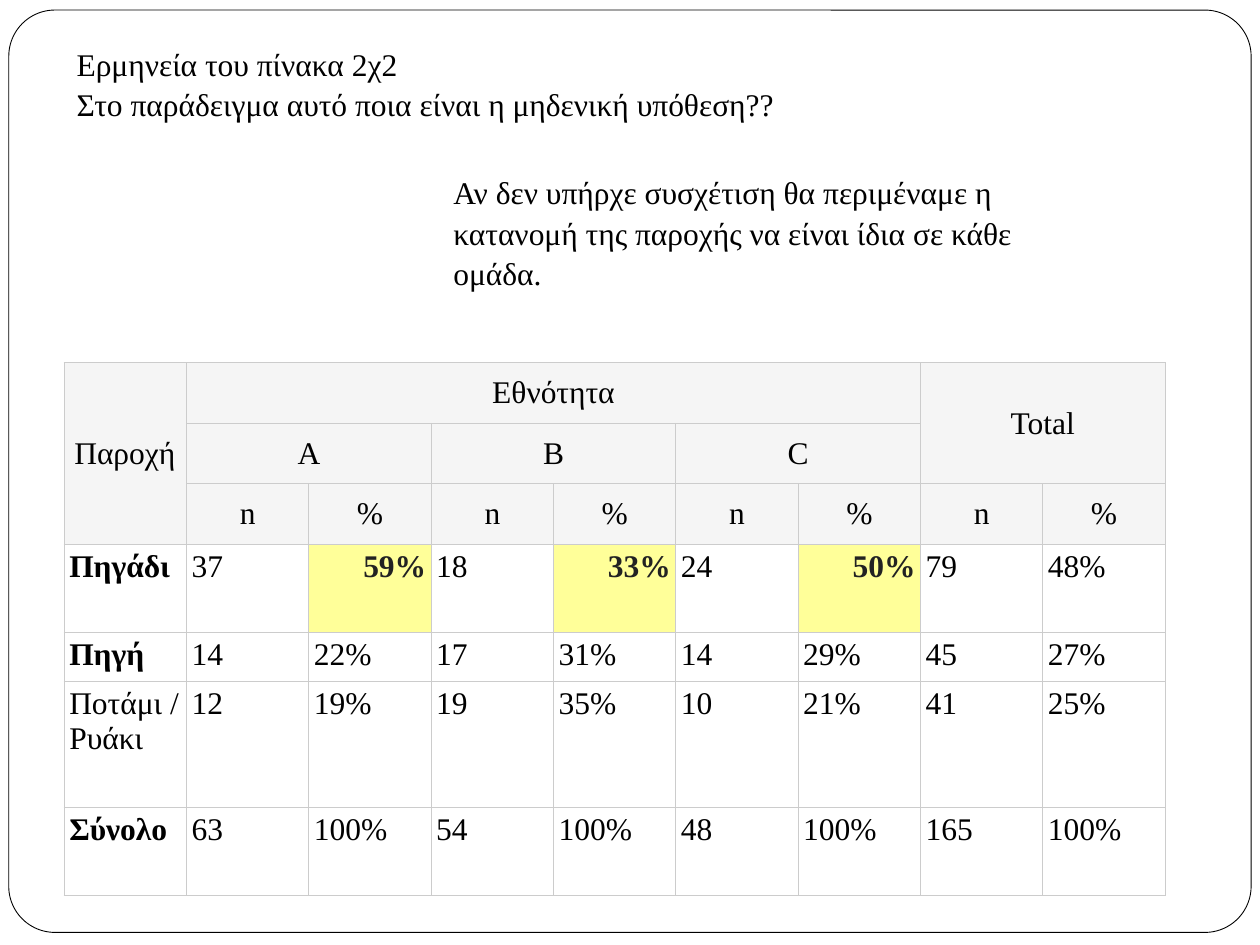
"""Build a slide with a water supply by ethnicity table and its null hypothesis."""
from lxml import etree
from pptx import Presentation
from pptx.dml.color import RGBColor
from pptx.enum.shapes import MSO_SHAPE
from pptx.enum.text import MSO_ANCHOR, PP_ALIGN
from pptx.oxml.ns import qn
from pptx.util import Inches, Pt

ROUNDED = MSO_SHAPE.ROUNDED_RECTANGLE
MIDDLE, TOP = MSO_ANCHOR.MIDDLE, MSO_ANCHOR.TOP
LEFT, CENTER, RIGHT = PP_ALIGN.LEFT, PP_ALIGN.CENTER, PP_ALIGN.RIGHT
COLORS = {"text": "000000", "strong": "222222", "paper": "FFFFFF",
          "header": "F5F5F5", "highlight": "FFFF99", "border": "CCCCCC"}
FONT = "Times New Roman"
COLUMN_WIDTH = Inches(8.74 / 9)
ROW_HEIGHTS = [0.48, 0.48, 0.48, 0.7, 0.39, 1, 0.7]
HEADER_ROWS = 3


def add_text(paragraph, text, color="text", bold=False):
    run = paragraph.add_run()
    run.text = text
    run.font.name, run.font.size, run.font.bold = FONT, Pt(18), bold
    run.font.color.rgb = RGBColor.from_string(COLORS[color])


def style_cell(cell, fill, margin, anchor):
    cell.margin_left = cell.margin_right = Inches(margin)
    cell.margin_top = cell.margin_bottom = Inches(margin)
    cell.vertical_anchor = anchor
    properties = cell._tc.get_or_add_tcPr()
    for side in ("a:lnL", "a:lnR", "a:lnT", "a:lnB"):
        line = etree.SubElement(properties, qn(side), w=str(Pt(0.75)))
        solid = etree.SubElement(line, qn("a:solidFill"))
        etree.SubElement(solid, qn("a:srgbClr"), val=COLORS["border"])
    cell.fill.solid()
    cell.fill.fore_color.rgb = RGBColor.from_string(COLORS[fill])


presentation = Presentation()
presentation.slide_width, presentation.slide_height = Inches(10), Inches(7.5)
slide = presentation.slides.add_slide(presentation.slide_layouts[6])

frame = slide.shapes.add_shape(ROUNDED, Inches(0.07), Inches(0.08), Inches(9.86), Inches(7.32))
frame.shadow.inherit = False
frame.adjustments[0] = 0.05
frame.fill.solid()
frame.fill.fore_color.rgb = RGBColor.from_string(COLORS["paper"])
frame.line.color.rgb = RGBColor.from_string(COLORS["text"])
frame.line.width = Pt(0.5)

text_blocks = [
    ((0.51, 0.29, 8.66, 0.71),
     ["Ερμηνεία του πίνακα 2χ2", "Στο παράδειγμα αυτό ποια είναι η μηδενική υπόθεση??"]),
    ((3.5, 1.31, 5, 1.01),
     ["Αν δεν υπήρχε συσχέτιση θα περιμέναμε η κατανομή της παροχής να είναι ίδια σε κάθε ομάδα."]),
]
for place, lines in text_blocks:
    text_frame = slide.shapes.add_textbox(*map(Inches, place)).text_frame
    text_frame.word_wrap = True
    for index, line_text in enumerate(lines):
        paragraph = text_frame.add_paragraph() if index else text_frame.paragraphs[0]
        paragraph.line_spacing = 1.06
        add_text(paragraph, line_text)

table_shape = slide.shapes.add_table(
    len(ROW_HEIGHTS), 9, Inches(0.51), Inches(2.88), COLUMN_WIDTH * 9, Inches(sum(ROW_HEIGHTS)))
table = table_shape.table
table.first_row = table.horz_banding = False
for column in table.columns:
    column.width = COLUMN_WIDTH
for row, height in zip(table.rows, ROW_HEIGHTS):
    row.height = Inches(height)

for row in range(HEADER_ROWS):
    for column in range(9):
        style_cell(table.cell(row, column), "header", 0.08, MIDDLE)

headers = [("Παροχή", 0, 0, 3, 1), ("Εθνότητα", 0, 1, 1, 6), ("Total", 0, 7, 2, 2)]
headers += [(group, 1, 1 + 2 * index, 1, 2) for index, group in enumerate("ABC")]
headers += [("%" if column % 2 == 0 else "n", 2, column, 1, 1) for column in range(1, 9)]
for text, row, column, row_span, column_span in headers:
    cell = table.cell(row, column)
    if row_span * column_span > 1:
        cell.merge(table.cell(row + row_span - 1, column + column_span - 1))
    paragraph = cell.text_frame.paragraphs[0]
    paragraph.alignment = CENTER if column else LEFT
    add_text(paragraph, text)

supplies = [
    ("Πηγάδι", "37", "59%", "18", "33%", "24", "50%", "79", "48%"),
    ("Πηγή", "14", "22%", "17", "31%", "14", "29%", "45", "27%"),
    ("Ποτάμι / Ρυάκι", "12", "19%", "19", "35%", "10", "21%", "41", "25%"),
    ("Σύνολο", "63", "100%", "54", "100%", "48", "100%", "165", "100%"),
]
for row, values in enumerate(supplies, HEADER_ROWS):
    for column, value in enumerate(values):
        highlighted = row == HEADER_ROWS and column in (2, 4, 6)
        bold_label = column == 0 and value != "Ποτάμι / Ρυάκι"
        cell = table.cell(row, column)
        style_cell(cell, "highlight" if highlighted else "paper", 0.04, TOP)
        paragraph = cell.text_frame.paragraphs[0]
        paragraph.alignment = RIGHT if highlighted else LEFT
        add_text(paragraph, value, "strong" if highlighted else "text", highlighted or bold_label)

presentation.save("out.pptx")
